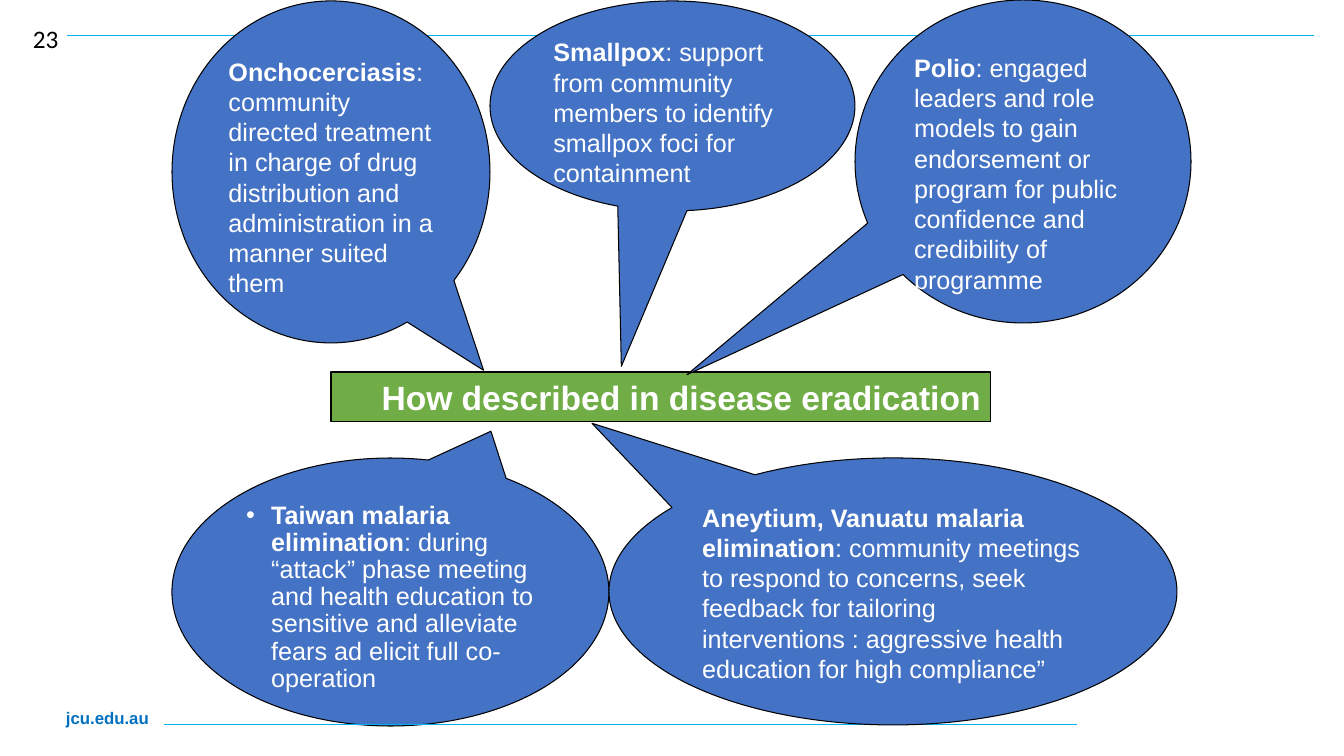
from lxml import etree
from pptx import Presentation
from pptx import util as u
from pptx.dml.color import RGBColor
from pptx.enum import shapes, text
from pptx.oxml import ns

SCALE = 914400 / 100.8
BLUE = RGBColor(0x44, 0x72, 0xC4)
GREEN = RGBColor(0x70, 0xAD, 0x47)
SKY = RGBColor(0x00, 0xB0, 0xF0)
LINK = RGBColor(0x00, 0x70, 0xC0)
BLACK = RGBColor(0, 0, 0)
WHITE = RGBColor(255, 255, 255)

BUBBLES = [
    ((855, 0, 336, 323), (-1.0, 0.66), "Polio",
     ": engaged leaders and role models to gain endorsement or program "
     "for public confidence and credibility of programme"),
    ((609, 458, 568, 267), (-0.53, -0.63), "Aneytium, Vanuatu malaria elimination",
     ": community meetings to respond to concerns, seek feedback for tailoring "
     "interventions : aggressive health education for high compliance”"),
    ((490, 1, 365, 210), (-0.14, 1.24), "Smallpox",
     ": support from community members to identify smallpox foci for containment"),
    ((172, 1, 318, 342), (0.48, 0.58), "Onchocerciasis",
     ": community directed treatment in charge of drug distribution and "
     "administration in a manner suited them"),
]
TAIWAN = ((172, 458, 437, 268), (0.23, -0.6), "Taiwan malaria elimination",
          ": during “attack” phase meeting and health education to sensitive "
          "and alleviate fears ad elicit full co-operation")


def px(n):
    return u.Emu(round(n * SCALE))


def place(shape, box):
    shape.left, shape.top, shape.width, shape.height = map(px, box)


def style(font, size, color, name="Arial"):
    font.size, font.name = u.Pt(size), name
    font.color.rgb = color


def paint(shape, color):
    shape.fill.solid()
    shape.fill.fore_color.rgb = color
    shape.line.color.rgb = BLACK
    shape.line.width = u.Pt(0.75)


def add_rule(slide, left, right, y):
    rule = slide.shapes.add_connector(
        shapes.MSO_CONNECTOR.STRAIGHT, px(left), px(y), px(right), px(y))
    rule.line.color.rgb = SKY
    rule.line.width = u.Pt(0.5)
    etree.SubElement(rule._element.spPr, ns.qn("a:effectLst"))


def add_label(slide, box, words, size, color, name, bold):
    frame = slide.shapes.add_textbox(*map(px, box)).text_frame
    frame.word_wrap = True
    para = frame.paragraphs[0]
    para.text = words
    style(para.font, size, color, name)
    para.font.bold = bold


def fill_bubble(shape, tip, head, body):
    shape.adjustments[0], shape.adjustments[1] = tip
    paint(shape, BLUE)
    frame = shape.text_frame
    frame.word_wrap = True
    frame.auto_size = text.MSO_AUTO_SIZE.NONE
    frame.vertical_anchor = text.MSO_ANCHOR.TOP
    para = frame.paragraphs[0]
    para.alignment = text.PP_ALIGN.LEFT
    for words, bold in ((head, True), (body, False)):
        run = para.add_run()
        run.text = words
        run.font.bold = bold
    style(para.font, 18, WHITE)
    for run in para.runs:
        style(run.font, 18, WHITE)
    return para


def add_bubble(slide, box, tip, head, body):
    shape = slide.shapes.add_shape(
        shapes.MSO_SHAPE.OVAL_CALLOUT, *map(px, box))
    shape.shadow.inherit = False
    fill_bubble(shape, tip, head, body)


def fill_list(shape, box, tip, head, body):
    place(shape, box)
    geom = etree.SubElement(
        shape._element.spPr, ns.qn("a:prstGeom"), prst="wedgeEllipseCallout")
    etree.SubElement(geom, ns.qn("a:avLst"))
    props = shape.text_frame.paragraphs[0]._p.get_or_add_pPr()
    props.set("marL", "228600")
    props.set("indent", "-228600")
    etree.SubElement(props, ns.qn("a:buFont"), typeface="Arial")
    etree.SubElement(props, ns.qn("a:buChar"), char="•")
    para = fill_bubble(shape, tip, head, body)
    para.line_spacing = 0.9
    para.space_before = u.Pt(0)


def fill_title(shape, box, words):
    place(shape, box)
    paint(shape, GREEN)
    frame = shape.text_frame
    frame.auto_size = text.MSO_AUTO_SIZE.NONE
    frame.vertical_anchor = text.MSO_ANCHOR.MIDDLE
    para = frame.paragraphs[0]
    para.text = words
    para.alignment = text.PP_ALIGN.RIGHT
    style(para.font, 24, WHITE)
    para.font.bold = True


def main():
    deck = Presentation()
    deck.slide_width, deck.slide_height = px(1344), px(756)
    slide = deck.slides.add_slide(deck.slide_layouts[1])
    add_label(slide, (56, 703, 124, 30), "jcu.edu.au", 12, LINK, "Arial", True)
    add_rule(slide, 164, 1077, 724)
    add_rule(slide, 67, 1314, 35)
    for bubble in BUBBLES:
        add_bubble(slide, *bubble)
    fill_list(slide.placeholders[1], *TAIWAN)
    fill_title(slide.shapes.title, (331, 372, 660, 50),
               "How described in disease eradication")
    add_label(slide, (23, 18, 50, 37), "23", 18, BLACK, "Calibri", False)
    deck.save("out.pptx")


if __name__ == "__main__":
    main()
